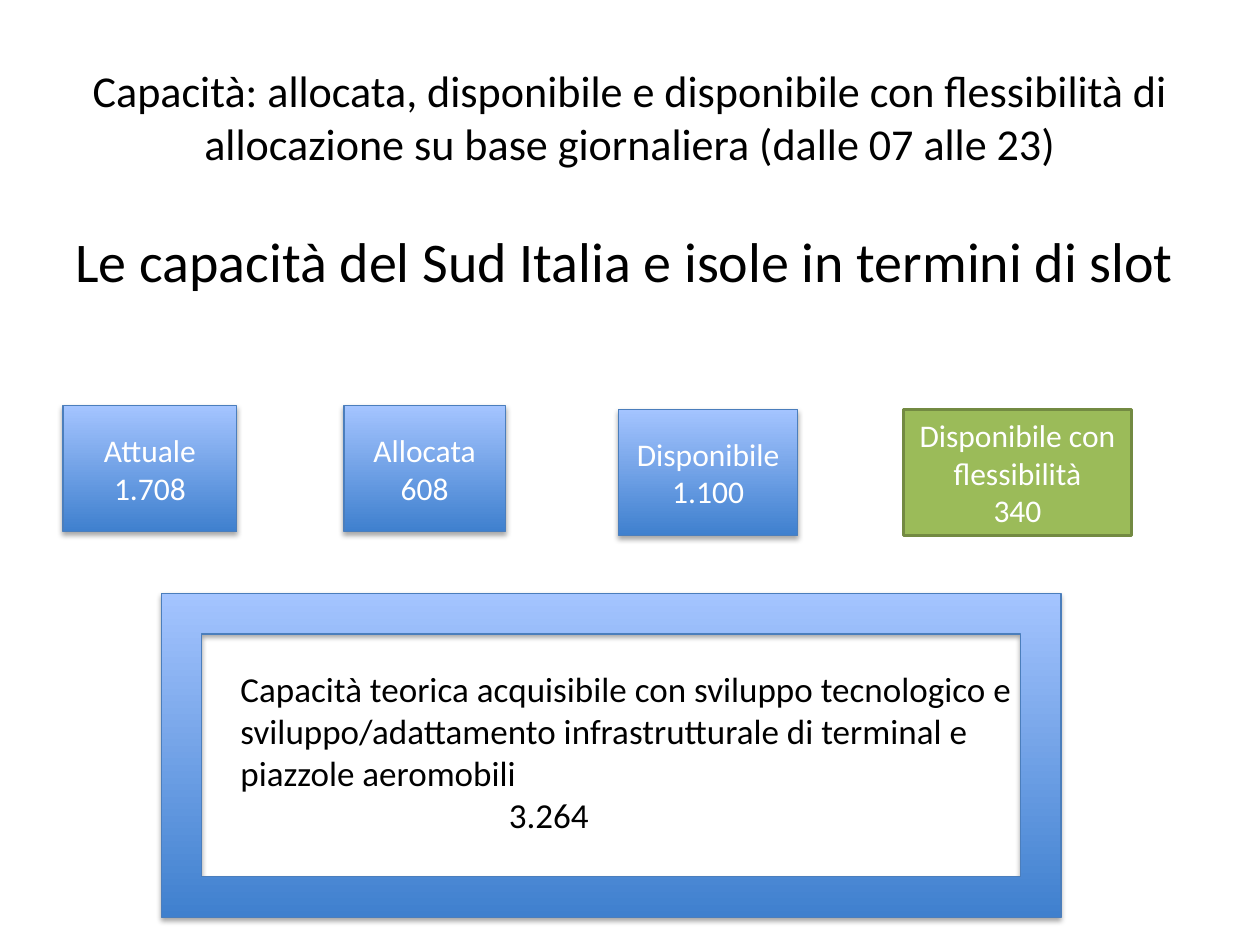
from pptx import Presentation
from pptx.dml.color import RGBColor
from pptx.enum.shapes import MSO_SHAPE as Shape
from pptx.enum.text import MSO_ANCHOR as Anchor, MSO_AUTO_SIZE as AutoSize, PP_ALIGN as Align
from pptx.oxml import parse_xml
from pptx.oxml.ns import nsdecls
from pptx.util import Inches, Pt

COLUMNS, ROWS = 100, 75
BLACK, WHITE = "000000", "FFFFFF"
DEEP_BLUE, PALE_BLUE, BLUE_EDGE = "3F80CE", "A4C4FF", "4B7EBC"
GREEN, GREEN_EDGE = "9BBB59", "738A42"


def color(value):
    return RGBColor.from_string(value)


def write(frame, lines, size=18, fill=WHITE, align=Align.CENTER, anchor=Anchor.MIDDLE,
          before=0, wrap=True):
    frame.word_wrap = wrap
    frame.vertical_anchor = anchor
    for index, line in enumerate(lines):
        paragraph = frame.add_paragraph() if index else frame.paragraphs[0]
        paragraph.alignment = align
        paragraph.space_before = Pt(before)
        run = paragraph.add_run()
        run.text = line
        run.font.name = "Calibri"
        run.font.size = Pt(size)
        run.font.color.rgb = color(fill)
    return frame


class SlideBuilder:
    def __init__(self, presentation):
        self.slide = presentation.slides.add_slide(presentation.slide_layouts[6])
        self.column = presentation.slide_width / COLUMNS
        self.row = presentation.slide_height / ROWS

    def place(self, left, top, width, height):
        return (round(left * self.column), round(top * self.row),
                round(width * self.column), round(height * self.row))

    def text(self, area, lines, **style):
        box = self.slide.shapes.add_textbox(*self.place(*area))
        return write(box.text_frame, lines, fill=BLACK, **style)

    def outlined(self, kind, area, edge, width):
        shape = self.slide.shapes.add_shape(kind, *self.place(*area))
        shape.line.color.rgb = color(edge)
        shape.line.width = Pt(width)
        shape.shadow.inherit = False
        return shape

    def blue(self, kind, area, lines=()):
        shape = self.outlined(kind, area, BLUE_EDGE, 0.75)
        shape.fill.gradient()
        shape.fill.gradient_angle = 90
        for stop, value in zip(shape.fill.gradient_stops, (DEEP_BLUE, PALE_BLUE)):
            stop.color.rgb = color(value)
        effects = shape.element.spPr.find("{*}effectLst")
        effects.append(parse_xml(
            f'<a:outerShdw {nsdecls("a")} blurRad="{Pt(3.1)}" dist="{Pt(1.8)}" '
            'dir="5400000" rotWithShape="0"><a:srgbClr val="000000">'
            '<a:alpha val="35000"/></a:srgbClr></a:outerShdw>'))
        write(shape.text_frame, lines)

    def green(self, area, lines):
        shape = self.outlined(Shape.RECTANGLE, area, GREEN_EDGE, 2)
        shape.fill.solid()
        shape.fill.fore_color.rgb = color(GREEN)
        write(shape.text_frame, lines)


def main():
    presentation = Presentation()
    presentation.slide_width, presentation.slide_height = Inches(10), Inches(7.5)
    builder = SlideBuilder(presentation)

    builder.text((5, 3, 90, 12.5), [
        "Capacità: allocata, disponibile e disponibile con flessibilità di "
        "allocazione su base giornaliera (dalle 07 alle 23)"], size=25.2)
    builder.text((5, 17.5, 90, 49.5), ["Le capacità del Sud Italia e isole in termini di slot"],
                 size=32, align=Align.LEFT, anchor=Anchor.TOP, before=6.4)

    for left, top, width, label, slots in (
            (5, 32.2, 13.8, "Attuale", "1.708"),
            (27.3, 32.2, 12.8, "Allocata", "608"),
            (49.1, 32.5, 14.2, "Disponibile", "1.100")):
        builder.blue(Shape.RECTANGLE, (left, top, width, 10), [label, slots])
    builder.green((71.7, 32.5, 18.1, 10), ["Disponibile con flessibilità", "340"])

    builder.blue(Shape.FRAME, (12.8, 47.1, 71.4, 25.7))
    theory = builder.text((18.1, 52.5, 63.9, 14.5), [
        "Capacità teorica acquisibile con sviluppo tecnologico e",
        "sviluppo/adattamento infrastrutturale di terminal e",
        "piazzole aeromobili",
        "3.264"], size=20, align=Align.LEFT, anchor=Anchor.TOP, wrap=False)
    theory.auto_size = AutoSize.SHAPE_TO_FIT_TEXT
    total = theory.paragraphs[-1]._p.get_or_add_pPr()
    total.set("marL", str(Inches(2.13)))
    total.set("indent", "0")

    presentation.save("out.pptx")


if __name__ == "__main__":
    main()
